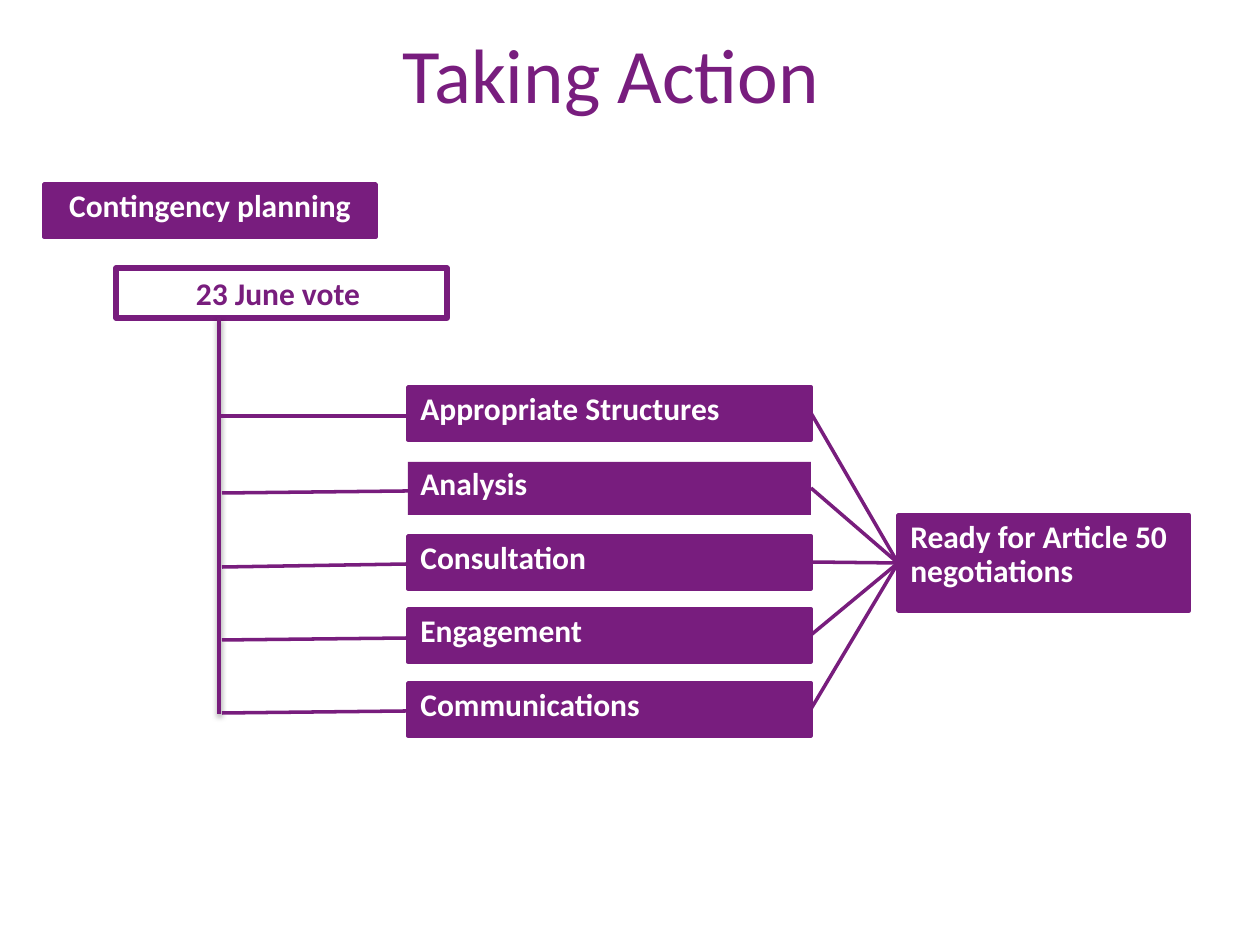
from lxml import etree
from pptx import Presentation
from pptx.dml.color import RGBColor
from pptx.enum.shapes import MSO_CONNECTOR as Connector, MSO_SHAPE as Shape
from pptx.enum.text import MSO_ANCHOR as Anchor, PP_ALIGN as Align
from pptx.oxml import parse_xml
from pptx.oxml.ns import nsdecls, qn
from pptx.util import Pt

PX = 914400 / 126
PURPLE, WHITE = "781D7E", "FFFFFF"
LINE_PURPLE = "781D7D"

presentation = Presentation()
presentation.slide_width = round(1260 * PX)
presentation.slide_height = round(945 * PX)
slide = presentation.slides.add_slide(presentation.slide_layouts[6])


def add_box(text, left, top, width, height, align=Align.LEFT, fill=PURPLE,
            line=PURPLE, line_width=2, color=WHITE, spacing=0.9):
    shape = slide.shapes.add_shape(
        Shape.RECTANGLE, *(round(value * PX) for value in (left, top, width, height)))
    shape.shadow.inherit = False
    shape.fill.solid()
    shape.fill.fore_color.rgb = RGBColor.from_string(fill)
    if line:
        shape.line.color.rgb = RGBColor.from_string(line)
        shape.line.width = Pt(line_width)
    else:
        shape.line.fill.background()
    frame = shape.text_frame
    frame.word_wrap = True
    frame.vertical_anchor = Anchor.TOP
    paragraph = frame.paragraphs[0]
    paragraph.text = text
    paragraph.alignment = align
    paragraph.line_spacing = spacing
    paragraph.font.name = "Calibri"
    paragraph.font.size = Pt(18)
    paragraph.font.bold = True
    paragraph.font.color.rgb = RGBColor.from_string(color)


def add_line(x1, y1, x2, y2):
    """Draw a purple line and return its empty effect list."""
    connector = slide.shapes.add_connector(
        Connector.STRAIGHT, *(round(value * PX) for value in (x1, y1, x2, y2)))
    connector.line.color.rgb = RGBColor.from_string(LINE_PURPLE)
    connector.line.width = Pt(2)
    return etree.SubElement(connector._element.spPr, qn("a:effectLst"))


# Title
title = slide.shapes.add_textbox(
    *(round(value * PX) for value in (44, 0, 1134, 145)))
title.text_frame.word_wrap = True
title.text_frame.vertical_anchor = Anchor.MIDDLE
paragraph = title.text_frame.paragraphs[0]
paragraph.text = "Taking Action"
paragraph.alignment = Align.CENTER
paragraph.font.name = "Calibri"
paragraph.font.size = Pt(44)
paragraph.font.color.rgb = RGBColor.from_string(PURPLE)

# Starting points and goal
add_box("Contingency planning", 44, 184, 332, 53, Align.CENTER)
add_box("23 June vote ", 116, 268, 331, 50, Align.CENTER, fill=WHITE,
        line=LINE_PURPLE, line_width=3, color=LINE_PURPLE, spacing=1.0)
add_box("Ready for Article 50 negotiations", 898, 515, 291, 96)

# Trunk with a soft shadow
trunk_effects = add_line(219, 318, 219, 714)
trunk_effects.append(parse_xml(
    f'<a:outerShdw {nsdecls("a")} blurRad="{Pt(3.1)}" dist="{Pt(1.6)}" '
    'dir="5400000" rotWithShape="0"><a:srgbClr val="000000">'
    '<a:alpha val="38000"/></a:srgbClr></a:outerShdw>'))

# Workstreams: name, box top, outline, branch start x and y, branch end y
workstreams = [
    ("Appropriate Structures", 387, PURPLE, 219, 416, 416),
    ("Analysis", 462, None, 222, 493, 491),
    ("Consultation", 536, PURPLE, 222, 567, 564),
    ("Engagement", 609, PURPLE, 222, 640, 638),
    ("Communications", 683, PURPLE, 222, 713, 711),
]
for name, top, outline, branch_x, start_y, end_y in workstreams:
    add_box(name, 408, top, 403, 53, line=outline)
    add_line(branch_x, start_y, 408, end_y)
    add_line(811, top + 26, 898, 563)

presentation.save("out.pptx")
